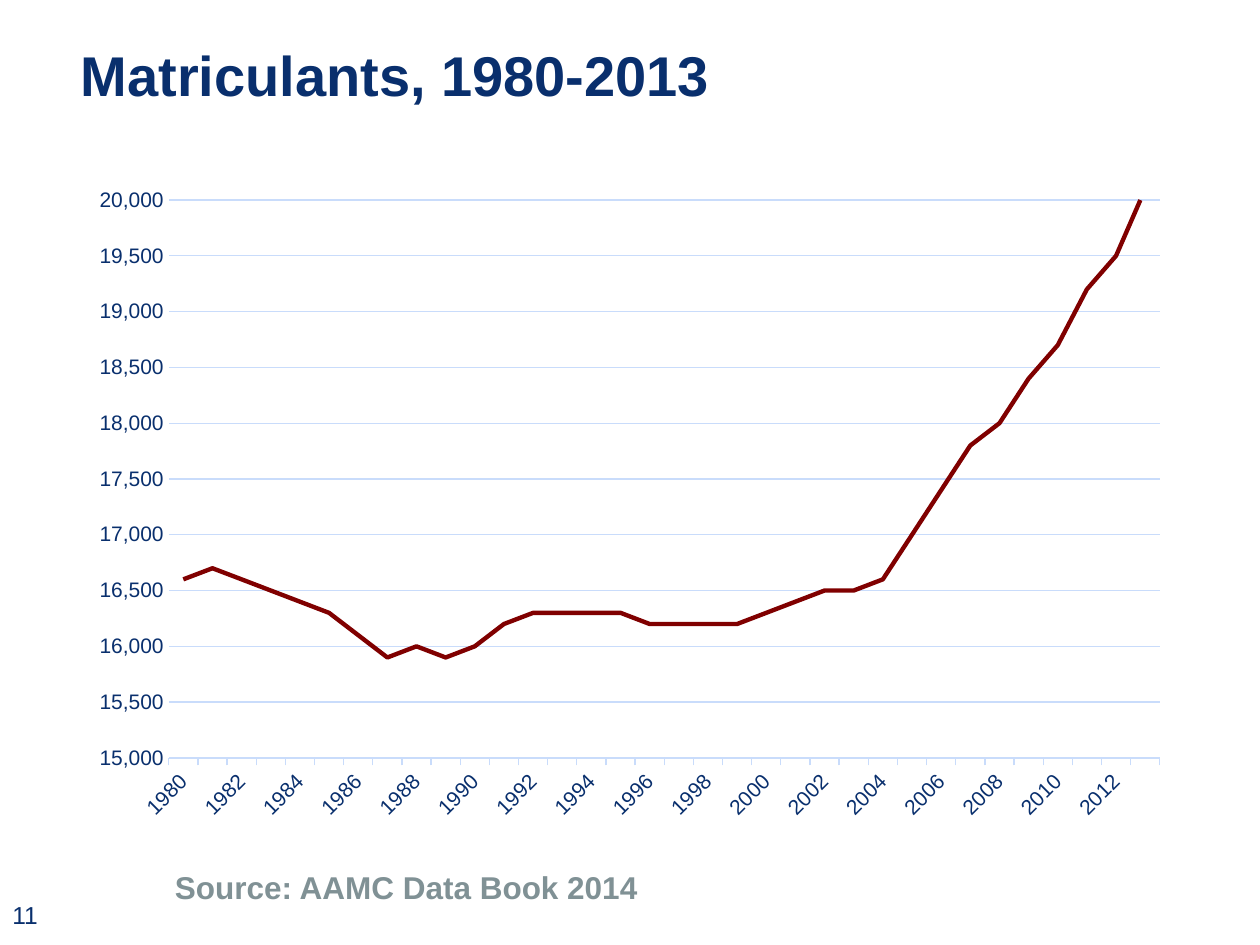
from dataclasses import dataclass

import pptx
import pptx.chart.data
import pptx.dml.color
import pptx.enum.chart
import pptx.enum.text
import pptx.oxml
import pptx.oxml.ns
import pptx.util

Inches = pptx.util.Inches
Pt = pptx.util.Pt
qn = pptx.oxml.ns.qn
NAVY, PALE, MAROON, GRAY = "092F6D", "C9DCFB", "800000", "809195"
FONT = "Arial"
YEARS = range(1980, 2014)
COUNTS = (
    16600, 16700, 16600, 16500, 16400, 16300, 16100, 15900, 16000, 15900,
    16000, 16200, 16300, 16300, 16300, 16300, 16200, 16200, 16200, 16200,
    16300, 16400, 16500, 16500, 16600, 17000, 17400, 17800, 18000, 18400,
    18700, 19200, 19500, 20100,
)


@dataclass
class Box:
    left: float
    top: float
    width: float
    height: float

    def lengths(self) -> tuple:
        return tuple(Inches(n) for n in (self.left, self.top, self.width, self.height))


def color(code: str):
    return pptx.dml.color.RGBColor.from_string(code)


def style(font, size: float, code: str = NAVY, bold: bool = False) -> None:
    font.name, font.size, font.bold = FONT, Pt(size), bold
    font.color.rgb = color(code)


def write(shape, text: str, *, size: float, code: str = NAVY, bold: bool = False,
          anchor: str = "TOP", inset: float | None = None, space: float | None = None) -> None:
    frame = shape.text_frame
    frame.word_wrap = True
    frame.vertical_anchor = pptx.enum.text.MSO_ANCHOR[anchor]
    if inset is not None:
        frame.margin_left = frame.margin_right = Inches(inset)
        frame.margin_top = frame.margin_bottom = Inches(inset)
    line = frame.paragraphs[0]
    line.alignment = pptx.enum.text.PP_ALIGN.LEFT
    line.line_spacing = space
    run = line.add_run()
    run.text = text
    style(run.font, size, code, bold)


def stroke(line, code: str, width: float) -> None:
    line.color.rgb = color(code)
    line.width = Pt(width)


def place(chart, area: Box) -> None:
    """Fix the inner plot area, in fractions of the chart."""
    plot = chart._chartSpace.chart.plotArea
    for old in plot.findall(qn("c:layout")):
        plot.remove(old)
    parts = (("x", area.left), ("y", area.top), ("w", area.width), ("h", area.height))
    modes = '<c:xMode val="edge"/><c:yMode val="edge"/>'
    sizes = "".join(f'<c:{key} val="{val}"/>' for key, val in parts)
    plot.insert(0, pptx.oxml.parse_xml(
        f'<c:layout {pptx.oxml.ns.nsdecls("c")}><c:manualLayout>'
        f'<c:layoutTarget val="inner"/>{modes}{sizes}</c:manualLayout></c:layout>'))


def slant(axis, angle: int, step: int) -> None:
    """Turn the labels and show one in each step."""
    node = axis._element
    body = node.find(qn("c:txPr")).find(qn("a:bodyPr"))
    body.set("rot", str(angle * 60000))
    body.set("vert", "horz")
    last = node.find(qn("c:noMultiLvlLbl"))
    for tag, gap in (("tickLblSkip", step), ("tickMarkSkip", 1)):
        last.addprevious(pptx.oxml.parse_xml(
            f'<c:{tag} {pptx.oxml.ns.nsdecls("c")} val="{gap}"/>'))


def draw_chart(slide, box: Box) -> None:
    data = pptx.chart.data.CategoryChartData(number_format="#,##0")
    data.categories = [str(year) for year in YEARS]
    data.add_series("Series 1", COUNTS)
    kind = pptx.enum.chart.XL_CHART_TYPE.LINE
    chart = slide.shapes.add_chart(kind, *box.lengths(), data).chart
    chart.has_legend = chart.has_title = False
    style(chart.font, 10)
    place(chart, Box(0.08, 0.04, 0.9, 0.85))

    marks = pptx.enum.chart.XL_TICK_MARK
    years, counts = chart.category_axis, chart.value_axis
    for axis, mark in ((years, marks.OUTSIDE), (counts, marks.NONE)):
        axis.major_tick_mark, axis.minor_tick_mark = mark, marks.NONE
        style(axis.tick_labels.font, 12)
    years.has_major_gridlines = False
    stroke(years.format.line, PALE, 0.75)
    slant(years, -45, 2)

    counts.minimum_scale, counts.maximum_scale, counts.major_unit = 15000, 20000, 500
    counts.tick_labels.number_format = "#,##0"
    counts.tick_labels.number_format_is_linked = False
    counts.has_major_gridlines = True
    stroke(counts.major_gridlines.format.line, PALE, 0.75)
    counts.format.line.fill.background()

    trend = chart.plots[0].series[0]
    trend.smooth = False
    trend.marker.style = pptx.enum.chart.XL_MARKER_STYLE.NONE
    stroke(trend.format.line, MAROON, 2.5)


def main() -> None:
    deck = pptx.Presentation()
    deck.slide_width, deck.slide_height = Inches(10), Inches(7.5)
    slide = deck.slides.add_slide(deck.slide_layouts[5])

    title = slide.shapes.title
    title.left, title.top, title.width, title.height = Box(0.64, 0.18, 9.17, 0.68).lengths()
    write(title, "Matriculants, 1980-2013", size=32, bold=True,
          anchor="BOTTOM", inset=0, space=0.85)

    draw_chart(slide, Box(0.64, 1.38, 8.74, 5.21))

    page = slide.shapes.add_textbox(*Box(0, 7.06, 2.33, 0.4).lengths())
    write(page, "11", size=14, anchor="MIDDLE")
    source = slide.shapes.add_textbox(*Box(1.29, 6.84, 6.26, 0.4).lengths())
    write(source, "Source: AAMC Data Book 2014", size=18, code=GRAY, bold=True)

    deck.save("out.pptx")


if __name__ == "__main__":
    main()
